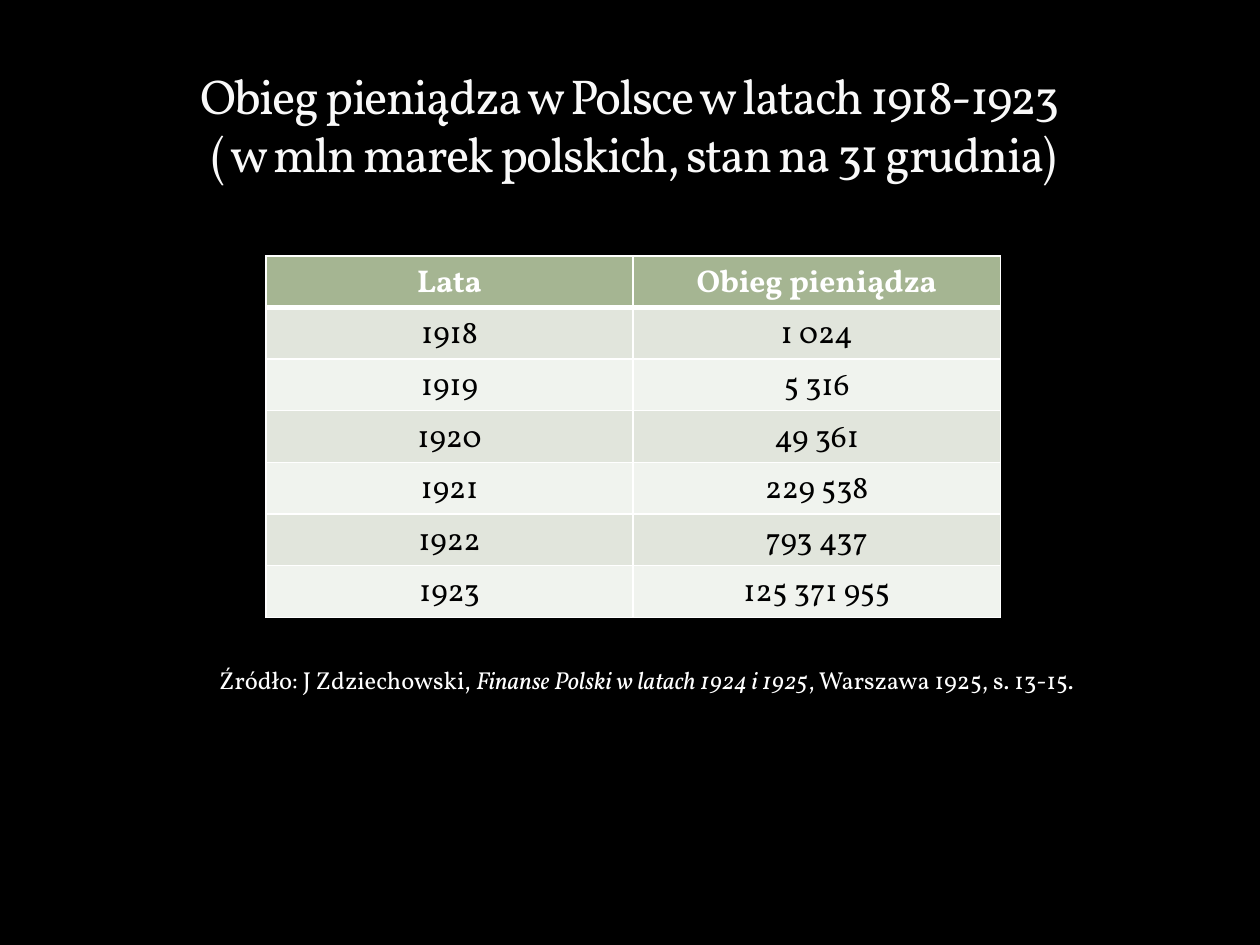
from dataclasses import dataclass

from lxml.etree import SubElement
from pptx import Presentation
from pptx.dml.color import RGBColor as Rgb
from pptx.enum.text import MSO_ANCHOR as Anchor, PP_ALIGN as Align
from pptx.oxml.ns import qn
from pptx.util import Inches, Pt


@dataclass(frozen=True)
class Theme:
    font: str = "Vollkorn"
    background: str = "000000"
    title: str = "F9F9F9"
    light: str = "FFFFFF"
    dark: str = "000000"
    header: str = "A5B592"
    bands: tuple = ("E1E5DC", "F0F3EE")
    title_size: int = 28
    table_size: int = 18
    source_size: int = 14
    thin: int = 1
    thick: int = 3


THEME = Theme()
WIDTH, HEIGHT = 10, 7.5
TITLE_LINES = (
    "Obieg pieniądza w Polsce w latach 1918-1923",
    " ( w mln marek polskich, stan na 31 grudnia)",
)
ROWS = (
    ("Lata", "Obieg pieniądza"),
    ("1918", "1 024"),
    ("1919", "5 316"),
    ("1920", "49 361"),
    ("1921", "229 538"),
    ("1922", "793 437"),
    ("1923", "125 371 955"),
)
SOURCE = (
    ("Źródło: J Zdziechowski, ", False),
    ("Finanse Polski w latach 1924 i 1925", True),
    (", Warszawa 1925, s. 13-15.", False),
)


def add_span(para, text, size, color, bold=False, italic=False):
    span = para.add_run()
    span.text = text
    font = span.font
    font.name, font.size = THEME.font, Pt(size)
    font.bold, font.italic = bold, italic
    font.color.rgb = Rgb.from_string(color)
    return span


def add_text_frame(page, box, anchor):
    frame = page.shapes.add_textbox(*map(Inches, box)).text_frame
    frame.word_wrap = True
    frame.vertical_anchor = anchor
    return frame


def add_title(page, box):
    para = add_text_frame(page, box, Anchor.BOTTOM).paragraphs[0]
    para.alignment = Align.CENTER
    for index, line in enumerate(TITLE_LINES):
        if index:
            para.add_line_break()
        span = add_span(para, line, THEME.title_size, THEME.title)
        span.font._element.set("spc", "-100")


def set_borders(cell, top, bottom):
    properties = cell._tc.get_or_add_tcPr()
    widths = {"lnL": THEME.thin, "lnR": THEME.thin, "lnT": top, "lnB": bottom}
    for side, width in widths.items():
        line = SubElement(properties, qn(f"a:{side}"), w=str(Pt(width)))
        fill = SubElement(line, qn("a:solidFill"))
        SubElement(fill, qn("a:srgbClr"), val=THEME.light)


def add_money_table(page, box):
    table = page.shapes.add_table(len(ROWS), len(ROWS[0]), *map(Inches, box)).table
    for row, values in enumerate(ROWS):
        is_header = row == 0
        fill = THEME.header if is_header else THEME.bands[(row - 1) % 2]
        color = THEME.light if is_header else THEME.dark
        top = THEME.thick if row == 1 else THEME.thin
        bottom = THEME.thick if is_header else THEME.thin
        for column, value in enumerate(values):
            cell = table.cell(row, column)
            set_borders(cell, top, bottom)
            cell.fill.solid()
            cell.fill.fore_color.rgb = Rgb.from_string(fill)
            para = cell.text_frame.paragraphs[0]
            para.alignment = Align.CENTER
            add_span(para, value, THEME.table_size, color, bold=is_header)


def add_source(page, box):
    para = add_text_frame(page, box, Anchor.TOP).paragraphs[0]
    for text, italic in SOURCE:
        add_span(para, text, THEME.source_size, THEME.light, italic=italic)


def main():
    deck = Presentation()
    deck.slide_width, deck.slide_height = Inches(WIDTH), Inches(HEIGHT)
    page = deck.slides.add_slide(deck.slide_layouts[6])
    page.background.fill.solid()
    page.background.fill.fore_color.rgb = Rgb.from_string(THEME.background)
    add_title(page, (0.05 * WIDTH, 0.17, 0.9 * WIDTH, 1.33))
    add_money_table(page, (2.11, 2.03, 5.83, 0.41 * len(ROWS)))
    add_source(page, (1.64, 5.23, 7.19, 0.33))
    deck.save("out.pptx")


if __name__ == "__main__":
    main()
